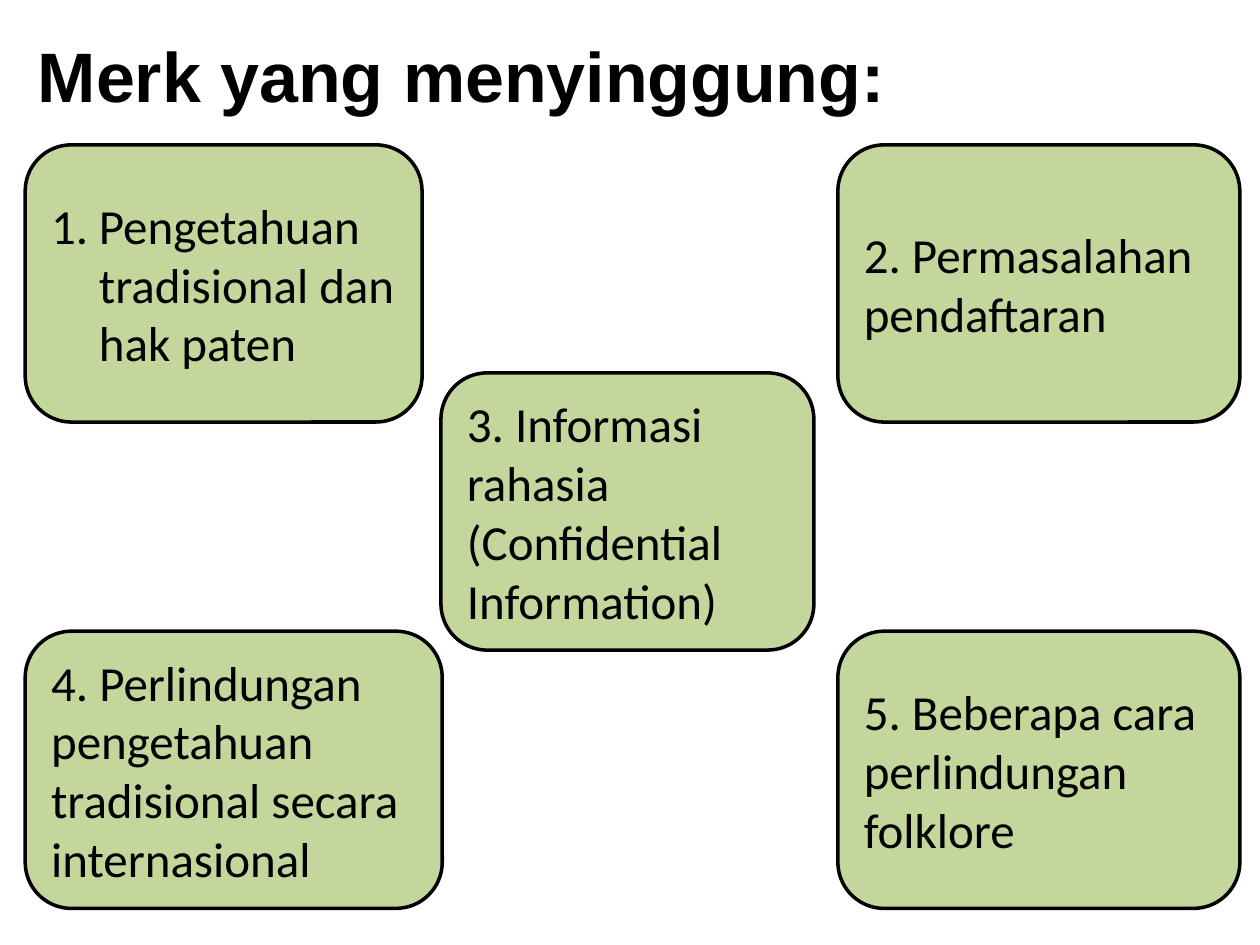
from lxml import etree
from pptx import Presentation
from pptx.dml.color import RGBColor
from pptx.enum.shapes import MSO_SHAPE
from pptx.enum.text import MSO_ANCHOR, MSO_AUTO_SIZE, PP_ALIGN
from pptx.oxml.ns import qn
from pptx.util import Inches, Pt

ROUNDED = MSO_SHAPE.ROUNDED_RECTANGLE
TOP, MIDDLE = MSO_ANCHOR.TOP, MSO_ANCHOR.MIDDLE
LEFT = PP_ALIGN.LEFT
FIT_SHAPE = MSO_AUTO_SIZE.SHAPE_TO_FIT_TEXT
TITLE_ONLY = 5

BLACK = "000000"
GREEN = "C3D69B"

LEFT_COLUMN, MIDDLE_COLUMN, RIGHT_COLUMN = 0.2, 3.5, 6.65
TOP_ROW, MIDDLE_ROW, BOTTOM_ROW = 1.15, 2.96, 5.01
CARD_HEIGHT = 2.2

# left, top, width, text, automatically numbered
CARDS = [
    (LEFT_COLUMN, TOP_ROW, 3.15, "Pengetahuan tradisional dan hak paten", True),
    (RIGHT_COLUMN, TOP_ROW, 3.19, "2. Permasalahan pendaftaran", False),
    (MIDDLE_COLUMN, MIDDLE_ROW, 2.96,
     "3. Informasi rahasia (Confidential Information)", False),
    (RIGHT_COLUMN, BOTTOM_ROW, 3.19, "5. Beberapa cara perlindungan folklore", False),
    (LEFT_COLUMN, BOTTOM_ROW, 3.31,
     "4. Perlindungan pengetahuan tradisional secara internasional", False),
]


def color(hex_string):
    return RGBColor.from_string(hex_string)


def number_paragraph(paragraph, indent):
    """Number the paragraph 1., 2., ... with a hanging indent."""
    properties = paragraph._p.get_or_add_pPr()
    properties.set("marL", str(indent))
    properties.set("indent", str(-indent))
    etree.SubElement(properties, qn("a:buAutoNum"), type="arabicPeriod")


def write_text(shape, text, size, font="Calibri", bold=False, anchor=MIDDLE,
               wrap=True, numbered=False):
    frame = shape.text_frame
    frame.word_wrap = wrap
    frame.vertical_anchor = anchor
    paragraph = frame.paragraphs[0]
    paragraph.alignment = LEFT
    if numbered:
        number_paragraph(paragraph, Inches(0.38))
    run = paragraph.add_run()
    run.text = text
    run.font.name = font
    run.font.size = Pt(size)
    run.font.bold = bold
    run.font.color.rgb = color(BLACK)


def place_title(slide, left, top, width, height):
    title = slide.shapes.title
    title.left, title.top = Inches(left), Inches(top)
    title.width, title.height = Inches(width), Inches(height)
    write_text(title, "Merk yang menyinggung:", 40, font="Arial", bold=True,
               anchor=TOP, wrap=False)
    title.text_frame.auto_size = FIT_SHAPE


def add_card(slide, left, top, width, height, text, numbered):
    card = slide.shapes.add_shape(
        ROUNDED, Inches(left), Inches(top), Inches(width), Inches(height))
    card.shadow.inherit = False
    card.fill.solid()
    card.fill.fore_color.rgb = color(GREEN)
    card.line.color.rgb = color(BLACK)
    card.line.width = Pt(2)
    write_text(card, text, 28, numbered=numbered)


def main():
    presentation = Presentation()
    presentation.slide_width = Inches(10)
    presentation.slide_height = Inches(7.5)
    slide = presentation.slides.add_slide(presentation.slide_layouts[TITLE_ONLY])
    place_title(slide, 0.2, 0.21, 6.99, 0.77)
    for left, top, width, text, numbered in CARDS:
        add_card(slide, left, top, width, CARD_HEIGHT, text, numbered)
    presentation.save("out.pptx")


if __name__ == "__main__":
    main()
